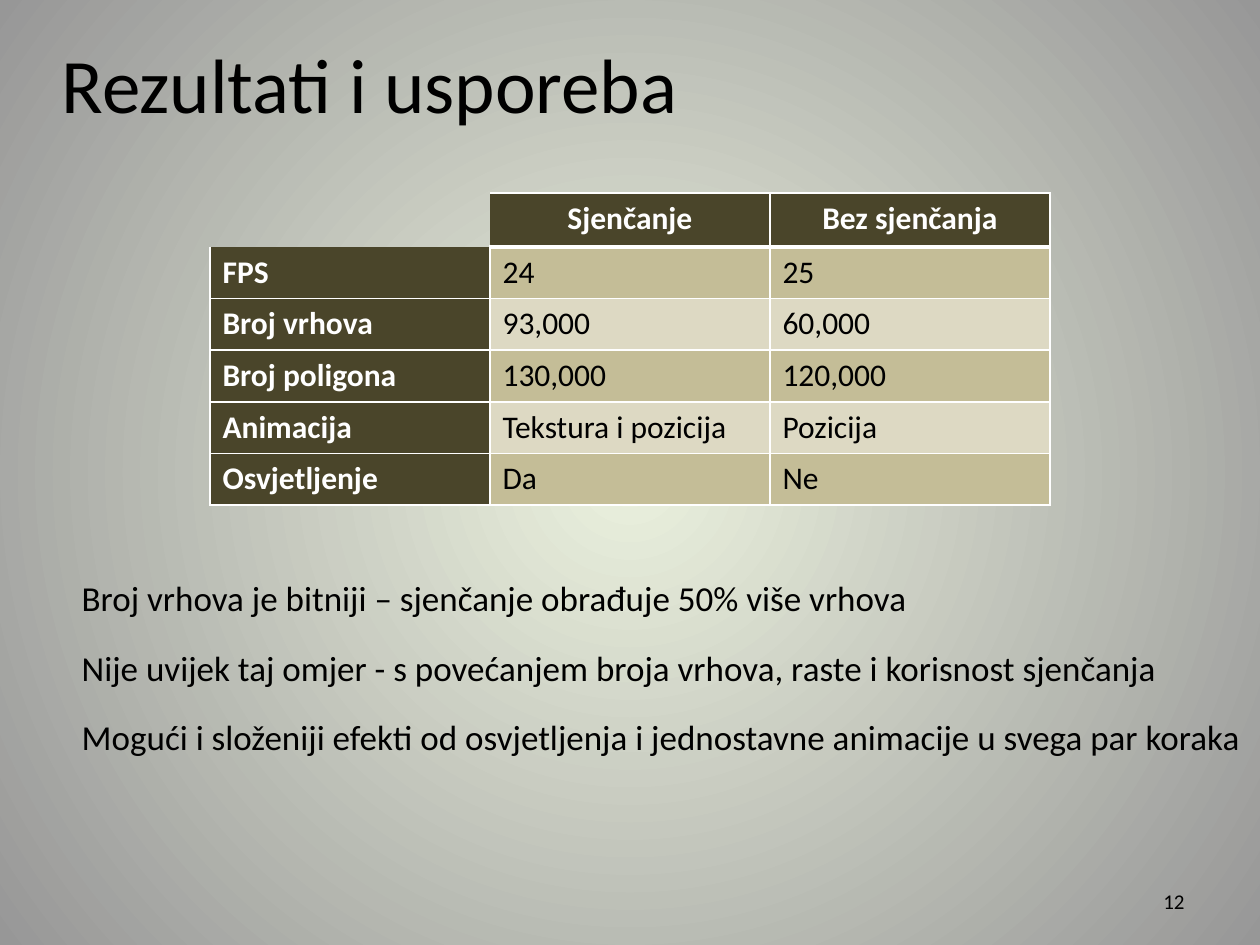
from lxml.etree import SubElement
from pptx import Presentation
from pptx.dml.color import RGBColor
from pptx.enum.text import MSO_ANCHOR, PP_ALIGN
from pptx.oxml import parse_xml
from pptx.oxml.ns import nsdecls, qn
from pptx.util import Inches, Pt

WIDTH, HEIGHT = 10, 7.5
BLACK, WHITE, DARK = "000000", "FFFFFF", "4A452A"
BANDS = ["C4BD97", "DDD9C3"]
ROWS = [
    ["", "Sjenčanje", "Bez sjenčanja"],
    ["FPS", "24", "25"],
    ["Broj vrhova", "93,000", "60,000"],
    ["Broj poligona", "130,000", "120,000"],
    ["Animacija", "Tekstura i pozicija", "Pozicija"],
    ["Osvjetljenje", "Da", "Ne"],
]
REMARKS = [
    ("Broj vrhova je bitniji – sjenčanje obrađuje 50% više vrhova", 6.8),
    ("Nije uvijek taj omjer - s povećanjem broja vrhova, raste i korisnost sjenčanja", 8.81),
    ("Mogući i složeniji efekti od osvjetljenja i jednostavne animacije u svega par koraka", 9.48),
]


def color(value):
    return RGBColor.from_string(value)


def write(frame, text, size=20, fill=BLACK, bold=False, align=PP_ALIGN.LEFT):
    para = frame.paragraphs[0]
    para.alignment = align
    span = para.add_run()
    span.text = text
    span.font.name = "Calibri"
    span.font.size = Pt(size)
    span.font.bold = bold
    span.font.color.rgb = color(fill)


def paint_background(page):
    fill = page.background.fill
    fill.gradient()
    for stop, position, value in zip(fill.gradient_stops, (0, 1), ("EBF1DE", "979797")):
        stop.position = position
        stop.color.rgb = color(value)
    linear = page.element.find(".//" + qn("a:lin"))
    linear.getparent().replace(linear, parse_xml(
        f'<a:path {nsdecls("a")} path="circle">'
        '<a:fillToRect l="50000" t="50000" r="50000" b="50000"/></a:path>'))


def add_title(page, text):
    title = page.shapes.title
    title.left, title.top = Inches(0.39), Inches(0.16)
    title.width, title.height = Inches(9), Inches(1)
    title.text_frame.vertical_anchor = MSO_ANCHOR.MIDDLE
    write(title.text_frame, text, size=44)


def add_text(page, text, left, top, width, height, wrap=False, anchor=MSO_ANCHOR.TOP, **style):
    box = page.shapes.add_textbox(Inches(left), Inches(top), Inches(width), Inches(height))
    box.text_frame.word_wrap = wrap
    box.text_frame.vertical_anchor = anchor
    write(box.text_frame, text, **style)


def set_borders(cell, widths):
    properties = cell._tc.get_or_add_tcPr()
    for index, side in enumerate("LRTB"):
        width = widths[side]
        line = SubElement(properties, qn(f"a:ln{side}"), w=str(Pt(width)))
        properties.insert(index, line)
        if width:
            SubElement(SubElement(line, qn("a:solidFill")), qn("a:srgbClr"), val=WHITE)
        else:
            SubElement(line, qn("a:noFill"))


def border_widths(row, column):
    if row == column == 0:
        return dict.fromkeys("LRTB", 0)
    widths = dict.fromkeys("LRTB", 1)
    if row == 0:
        widths["B"] = 3
        widths["L"] = column - 1
    if row == 1:
        widths["T"] = 3 if column else 0
    return widths


def format_cell(cell, text, row, column):
    heading = row == 0 or column == 0
    if text:
        cell.fill.solid()
        cell.fill.fore_color.rgb = color(DARK if heading else BANDS[(row - 1) % 2])
        write(cell.text_frame, text, size=18, fill=WHITE if heading else BLACK,
              bold=heading, align=PP_ALIGN.LEFT if row else PP_ALIGN.CENTER)
    else:
        cell.fill.background()
    set_borders(cell, border_widths(row, column))


def add_results(page):
    width = WIDTH * 2 / 3
    frame = page.shapes.add_table(len(ROWS), len(ROWS[0]), Inches((WIDTH - width) / 2),
                                  Inches(1.53), Inches(width), Inches(2.45))
    table = frame.table
    for row, texts in enumerate(ROWS):
        table.rows[row].height = Inches(0.41 if row else 0.43)
        for column, text in enumerate(texts):
            format_cell(table.cell(row, column), text, row, column)


def main():
    deck = Presentation()
    deck.slide_width, deck.slide_height = Inches(WIDTH), Inches(HEIGHT)
    page = deck.slides.add_slide(deck.slide_layouts[5])
    paint_background(page)
    add_title(page, "Rezultati i usporeba")
    add_text(page, "12", 7.17, 6.95, 2.33, 0.4, wrap=True, anchor=MSO_ANCHOR.MIDDLE,
             size=12, align=PP_ALIGN.RIGHT)
    add_results(page)
    for index, (text, width) in enumerate(REMARKS):
        add_text(page, text, 0.55, 4.53 + 0.55 * index, width, 0.44)
    deck.save("out.pptx")


if __name__ == "__main__":
    main()
